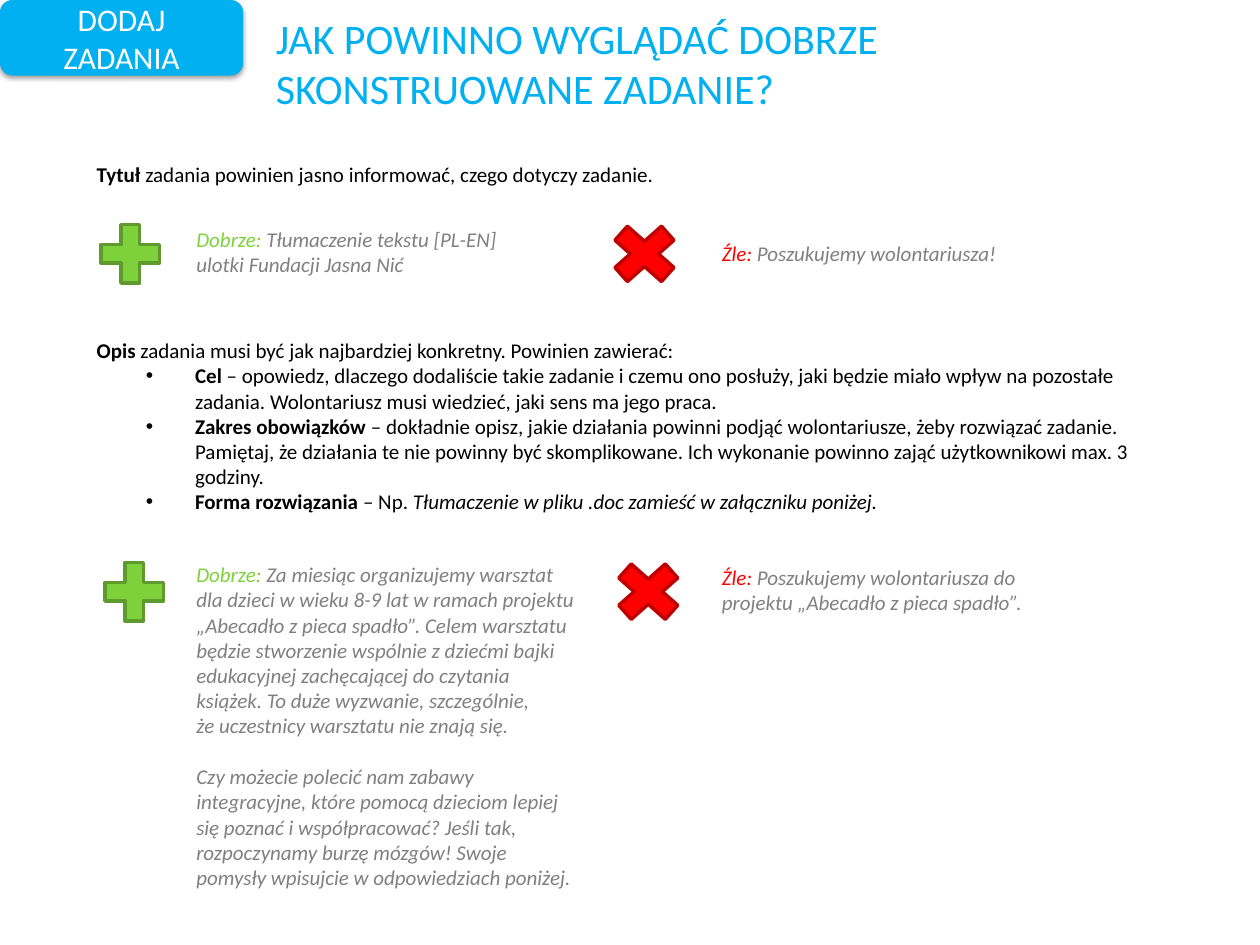
"""Build the slide on how a well-constructed volunteer task should look."""
from lxml.etree import SubElement
from pptx import Presentation
from pptx.dml.color import RGBColor as Color
from pptx.enum.shapes import MSO_SHAPE as Preset
from pptx.enum.text import MSO_ANCHOR as Anchor, MSO_AUTO_SIZE as AutoSize, PP_ALIGN as Align
from pptx.oxml.ns import qn
from pptx.util import Pt

COLORS = {"blue": "00B0F0", "black": "000000", "white": "FFFFFF", "gray": "808080",
          "green": "7FD13B", "dark green": "5E9B2C", "red": "FF0000", "dark red": "C00000"}
BODY = {"name": "Calibri", "size": Pt(12)}
PLAIN, BOLD, ITALIC = {}, {"bold": True}, {"italic": True}
GOOD, BAD, EXAMPLE = [{"italic": True, "color": name} for name in ("green", "red", "gray")]
TITLE = {"size": Pt(24), "color": "blue"}
BADGE = {"size": Pt(18), "color": "white"}
BULLET = "•"
LEFT, GOOD_LEFT, BAD_LEFT = 48.2, 105.1, 405.4

TEXTS = [
    ((150.5, 3.6, 475.9, 65.4), [("", [("JAK POWINNO WYGLĄDAĆ DOBRZE SKONSTRUOWANE ZADANIE?", TITLE)])]),
    ((LEFT, 88.6, 516.2, 21.8), [
        ("", [("Tytuł ", BOLD), ("zadania powinien jasno informować, czego dotyczy zadanie.", PLAIN)])]),
    ((GOOD_LEFT, 126, 209.5, 36.2), [
        ("", [("Dobrze: ", GOOD), ("Tłumaczenie tekstu [PL-EN] ulotki Fundacji Jasna Nić", EXAMPLE)])]),
    ((BAD_LEFT, 134, 209.5, 21.8), [
        ("", [("Źle: ", BAD), ("Poszukujemy wolontariusza!", EXAMPLE)])]),
    ((LEFT, 189.4, 617.8, 108.7), [
        ("", [("Opis", BOLD), (" zadania musi być jak najbardziej konkretny. Powinien zawierać:", PLAIN)]),
        (BULLET, [("Cel ", BOLD),
                  ("– opowiedz, dlaczego dodaliście takie zadanie i czemu ono posłuży, jaki będzie miało "
                   "wpływ na pozostałe zadania. Wolontariusz musi wiedzieć, jaki sens ma jego praca.", PLAIN)]),
        (BULLET, [("Zakres obowiązków ", BOLD),
                  ("– dokładnie opisz, jakie działania powinni podjąć wolontariusze, żeby rozwiązać zadanie. "
                   "Pamiętaj, że działania te nie powinny być skomplikowane. Ich wykonanie powinno zająć "
                   "użytkownikowi max. 3 godziny.", PLAIN)]),
        (BULLET, [("Forma rozwiązania ", BOLD), ("– Np. ", PLAIN),
                  ("Tłumaczenie w pliku .doc zamieść w załączniku poniżej.", ITALIC)])]),
    ((GOOD_LEFT, 317.5, 232.6, 196.6), [
        ("", [("Dobrze: ", GOOD),
              ("Za miesiąc organizujemy warsztat dla dzieci w wieku 8-9 lat w ramach projektu „Abecadło "
               "z pieca spadło”. Celem warsztatu będzie stworzenie wspólnie z dziećmi bajki edukacyjnej "
               "zachęcającej do czytania książek. To duże wyzwanie, szczególnie, ", EXAMPLE),
              ("\n", EXAMPLE), ("że uczestnicy warsztatu nie znają się.", EXAMPLE)]),
        ("", [("Czy możecie polecić nam zabawy integracyjne, które pomocą dzieciom lepiej się poznać "
               "i współpracować? Jeśli tak, rozpoczynamy burzę mózgów! Swoje pomysły wpisujcie "
               "w odpowiedziach poniżej.", EXAMPLE)])]),
    ((BAD_LEFT, 319, 209.5, 36.2), [
        ("", [("Źle: ", BAD), ("Poszukujemy wolontariusza do projektu „Abecadło z pieca spadło”.", EXAMPLE)])]),
]

MARK_ROWS = [(51.8, 122.4), (54, 315.4)]
MARKS = [(Preset.MATH_PLUS, 0, 45.4, "green", "dark green"),
         (Preset.MATH_MULTIPLY, 290.9, 51.1, "red", "dark red")]
MARK_HEIGHT = 45.4
PARAGRAPH_GAP = 14.6


def color(name):
    return Color.from_string(COLORS[name])


def write(para, spans):
    for text, style in spans:
        if text == "\n":
            para.add_line_break()
            continue
        span = para.add_run()
        span.text = text
        values = {**BODY, "color": "black", **style}
        span.font.color.rgb = color(values.pop("color"))
        for key, value in values.items():
            setattr(span.font, key, value)


def add_bullet(para, char):
    props = para._p.get_or_add_pPr()
    props.set("marL", str(Pt(56.2)))
    props.set("indent", str(-Pt(28.1)))
    SubElement(props, qn("a:buFont"), typeface="Arial")
    SubElement(props, qn("a:buChar"), char=char)


def add_text(page, place, paragraphs):
    frame = page.shapes.add_textbox(*map(Pt, place)).text_frame
    frame.word_wrap = True
    frame.auto_size = AutoSize.SHAPE_TO_FIT_TEXT
    for index, (bullet, spans) in enumerate(paragraphs):
        para = frame.add_paragraph() if index else frame.paragraphs[0]
        if bullet:
            add_bullet(para, bullet)
        elif index:
            para.space_before = Pt(PARAGRAPH_GAP)
        write(para, spans)


def add_shape(page, preset, place, fill, line=None):
    shape = page.shapes.add_shape(preset, *map(Pt, place))
    shape.shadow.inherit = False
    shape.fill.solid()
    shape.fill.fore_color.rgb = color(fill)
    if line:
        shape.line.color.rgb = color(line)
        shape.line.width = Pt(2)
    else:
        shape.line.fill.background()
    return shape


def add_badge(page):
    badge = add_shape(page, Preset.ROUNDED_RECTANGLE, (0, 0, 139, 43.2), "blue")
    effects = badge._element.spPr.find(qn("a:effectLst"))
    shadow = SubElement(effects, qn("a:outerShdw"), blurRad=str(Pt(3.1)), dist=str(Pt(1.6)),
                        dir="5400000", rotWithShape="0")
    tone = SubElement(shadow, qn("a:srgbClr"), val=COLORS["black"])
    SubElement(tone, qn("a:alpha"), val="38000")
    frame = badge.text_frame
    frame.word_wrap = True
    frame.vertical_anchor = Anchor.MIDDLE
    frame.paragraphs[0].alignment = Align.CENTER
    write(frame.paragraphs[0], [("DODAJ ZADANIA", BADGE)])


def main():
    deck = Presentation()
    deck.slide_width, deck.slide_height = Pt(720), Pt(540)
    page = deck.slides.add_slide(deck.slide_layouts[6])
    for left, top in MARK_ROWS:
        for preset, offset, width, fill, line in MARKS:
            add_shape(page, preset, (left + offset, top, width, MARK_HEIGHT), fill, line)
    for place, paragraphs in TEXTS:
        add_text(page, place, paragraphs)
    add_badge(page)
    deck.save("out.pptx")


if __name__ == "__main__":
    main()
